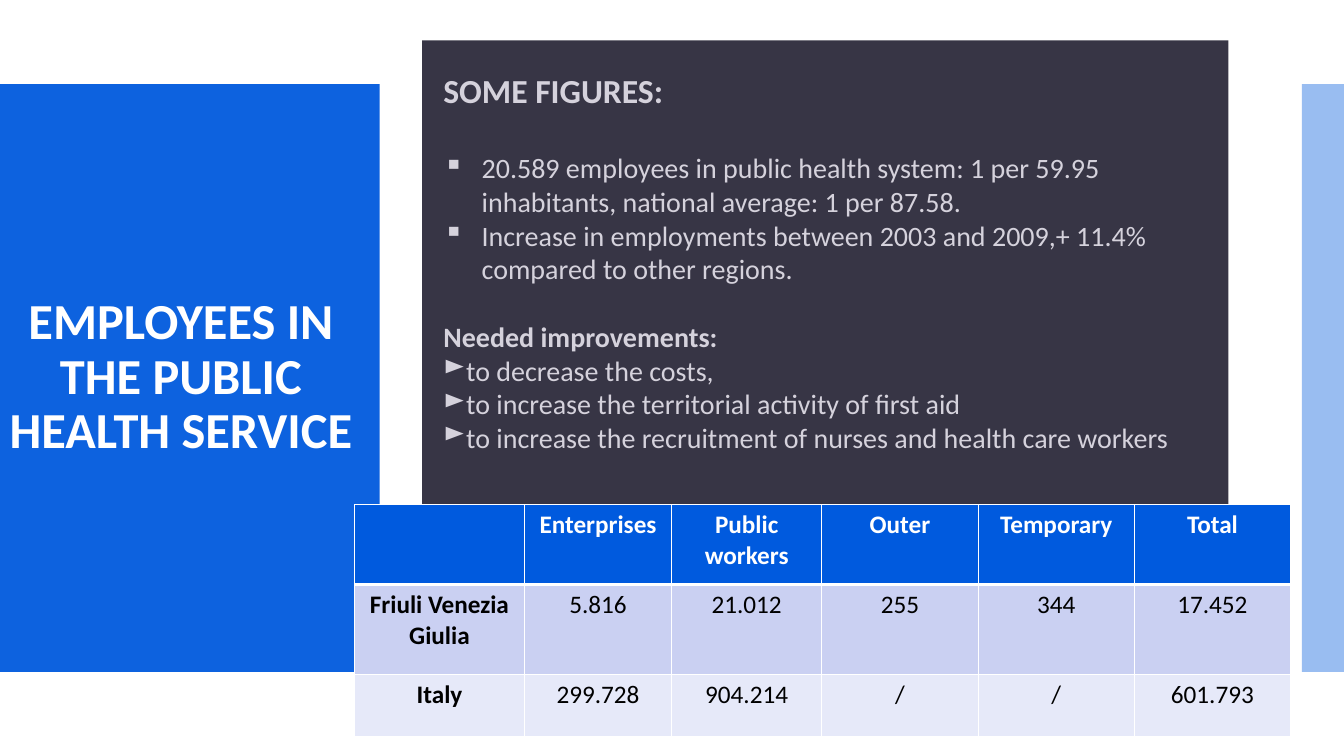
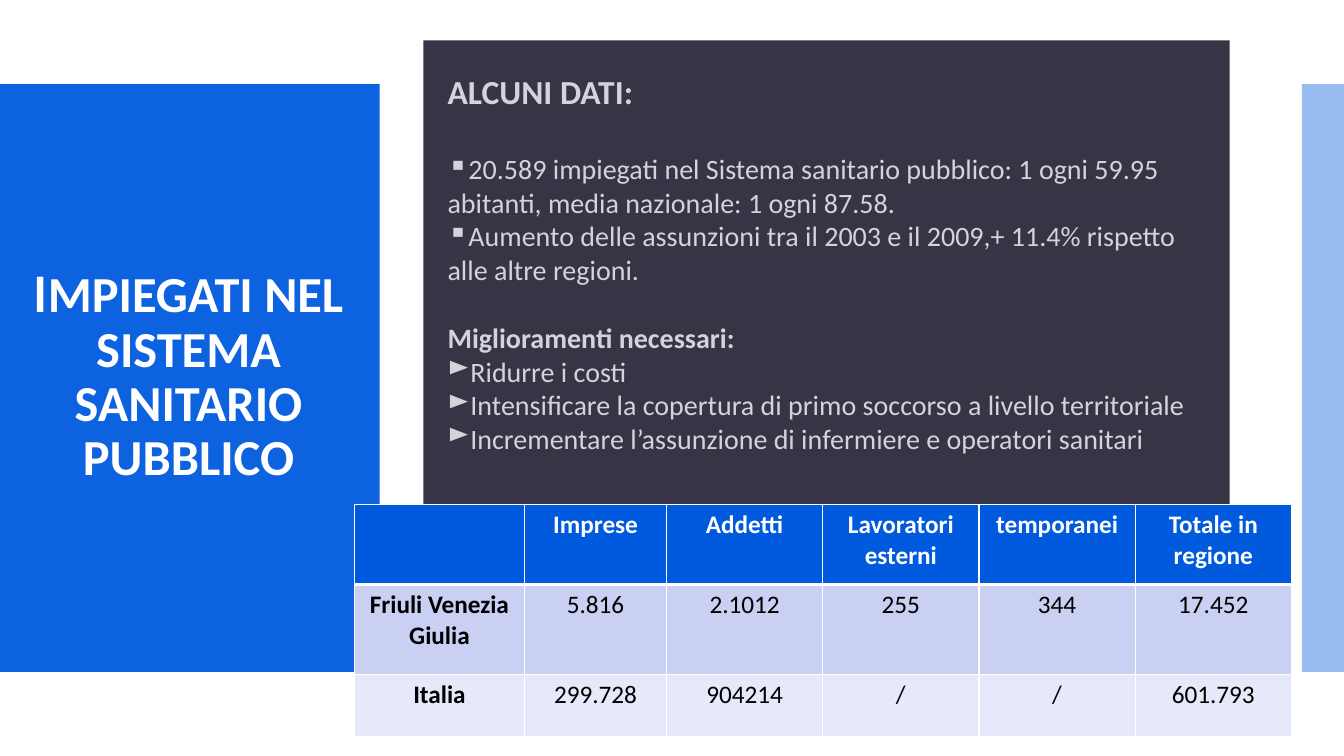
"""Build the English and Italian slides on public health service employees."""
from dataclasses import dataclass

from lxml.etree import SubElement
from pptx import Presentation
from pptx.dml.color import RGBColor
from pptx.enum.shapes import MSO_SHAPE
from pptx.enum.text import MSO_ANCHOR, MSO_AUTO_SIZE, PP_ALIGN
from pptx.oxml.ns import qn
from pptx.slide import Slide
from pptx.util import Emu, Inches, Pt

COLUMNS, ROWS = 160, 90
CELL = Inches(1 / 12)

BLUE = RGBColor(0x00, 0x5A, 0xDE)
DARK = RGBColor(0x37, 0x35, 0x45)
PALE = RGBColor(0xD5, 0xD2, 0xDC)
WHITE = RGBColor(0xFF, 0xFF, 0xFF)
BLACK = RGBColor(0x00, 0x00, 0x00)
BODY_FILLS = (RGBColor(0xCA, 0xD0, 0xF2), RGBColor(0xE6, 0xE9, 0xF9))

FONT, INITIAL_FONT = "Calibri", "Cabin"
LINE_HEIGHT = 1.22
TABLE_LEFT, TABLE_TOP = 42.2, 60.1
ROW_HEIGHTS = (9.5, 10.75, 7.4)


@dataclass(frozen=True)
class Box:
    """Area in grid columns and rows."""
    left: float
    top: float
    width: float
    height: float

    def emu(self) -> tuple[Emu, ...]:
        return tuple(grid(n) for n in (self.left, self.top, self.width, self.height))


@dataclass(frozen=True)
class Line:
    """Paragraph of the figures panel; indents are in inches, the gap in points."""
    text: str
    size: int = 20
    bold: bool = False
    bullet: str = ""
    margin: float = 0
    indent: float = 0
    gap: float = 0


@dataclass(frozen=True)
class Language:
    """Content and placement of one slide."""
    title: tuple[tuple[str, str], ...]
    title_left: float
    panel_left: float
    figures_left: float
    figures_top: float
    heading: str
    facts: tuple[str, ...]
    fact_margin: float
    fact_indent: float
    needs_heading: str
    needs: tuple[str, ...]
    column_widths: tuple[float, ...]
    staff: tuple[tuple[str, ...], ...]

    def lines(self) -> list[Line]:
        facts = [
            Line(fact, bullet="▪", margin=self.fact_margin, indent=self.fact_indent,
                 gap=0 if i else 24 * LINE_HEIGHT)
            for i, fact in enumerate(self.facts)
        ]
        needs = [Line(need, bullet="►", indent=-0.06) for need in self.needs]
        return [
            Line(self.heading, size=24, bold=True),
            *facts,
            Line(self.needs_heading, bold=True, gap=20 * LINE_HEIGHT),
            *needs,
        ]


ENGLISH = Language(
    title=(("EMPLOYEES IN THE PUBLIC HEALTH SERVICE", FONT),),
    title_left=-1.7, panel_left=50.25, figures_left=51.6, figures_top=7.7,
    heading="SOME FIGURES:",
    facts=(
        "20.589 employees in public health system: 1 per 59.95 inhabitants, "
        "national average: 1 per 87.58.",
        "Increase in employments between 2003 and 2009,+ 11.4% compared to other regions.",
    ),
    fact_margin=0.38, fact_indent=-0.38,
    needs_heading="Needed improvements:",
    needs=(
        "to decrease the costs,",
        "to increase the territorial activity of first aid",
        "to increase the recruitment of nurses and health care workers",
    ),
    column_widths=(20.25, 17.5, 17.9, 18.6, 18.6, 18.6),
    staff=(
        ("", "Enterprises", "Public workers", "Outer", "Temporary", "Total"),
        ("Friuli Venezia Giulia", "5.816", "21.012", "255", "344", "17.452"),
        ("Italy", "299.728", "904.214", "/", "/", "601.793"),
    ),
)
ITALIAN = Language(
    title=(("I", INITIAL_FONT), ("MPIEGATI NEL SISTEMA SANITARIO PUBBLICO", FONT)),
    title_left=-0.8, panel_left=50.4, figures_left=52.1, figures_top=7.8,
    heading="ALCUNI DATI:",
    facts=(
        "20.589 impiegati nel Sistema sanitario pubblico: 1 ogni 59.95 abitanti, "
        "media nazionale: 1 ogni 87.58.",
        "Aumento delle assunzioni tra il 2003 e il 2009,+ 11.4% rispetto alle altre regioni.",
    ),
    fact_margin=0, fact_indent=-0.14,
    needs_heading="Miglioramenti necessari:",
    needs=(
        "Ridurre i costi",
        "Intensificare la copertura di primo soccorso a livello territoriale",
        "Incrementare l’assunzione di infermiere e operatori sanitari",
    ),
    column_widths=(20.25, 16.9, 18.6, 18.6, 18.6, 18.6),
    staff=(
        ("", "Imprese", "Addetti", "Lavoratori esterni", "temporanei", "Totale in regione"),
        ("Friuli Venezia Giulia", "5.816", "2.1012", "255", "344", "17.452"),
        ("Italia", "299.728", "904214", "/", "/", "601.793"),
    ),
)


def grid(cells: float) -> Emu:
    return Emu(round(cells * CELL))


def style(font, size: int, color: RGBColor, bold: bool) -> None:
    font.name, font.size, font.bold = FONT, Pt(size), bold
    font.color.rgb = color


def draw_block(slide: Slide, box: Box, color: RGBColor, opacity: int = 100) -> None:
    block = slide.shapes.add_shape(MSO_SHAPE.RECTANGLE, *box.emu())
    block.shadow.inherit = False
    block.fill.solid()
    block.fill.fore_color.rgb = color
    block.line.fill.background()
    if opacity < 100:
        tint = block.element.spPr.find(f"{qn('a:solidFill')}/{qn('a:srgbClr')}")
        SubElement(tint, qn("a:alpha"), val=str(opacity * 1000))


def place_title(slide: Slide, language: Language) -> None:
    title = slide.shapes.title
    title.left, title.top, title.width, title.height = Box(
        language.title_left, 14.8, 46.5, 60.4).emu()
    title.element.getparent().append(title.element)
    frame = title.text_frame
    frame.word_wrap = True
    frame.auto_size = MSO_AUTO_SIZE.NONE
    frame.vertical_anchor = MSO_ANCHOR.MIDDLE
    paragraph = frame.paragraphs[0]
    paragraph.alignment = PP_ALIGN.CENTER
    paragraph.line_spacing = 0.9
    style(paragraph.font, 36, WHITE, True)
    for text, font_name in language.title:
        run = paragraph.add_run()
        run.text = text
        run.font.name = font_name


def add_bullet(paragraph, line: Line) -> None:
    properties = paragraph._p.get_or_add_pPr()
    properties.set("marL", str(Inches(line.margin)))
    properties.set("indent", str(Inches(line.indent)))
    SubElement(SubElement(properties, qn("a:buClr")), qn("a:srgbClr"), val=str(PALE))
    SubElement(properties, qn("a:buChar"), char=line.bullet)


def write_figures(slide: Slide, language: Language) -> None:
    area = Box(language.figures_left, language.figures_top, 94.2, 47.3)
    frame = slide.shapes.add_textbox(*area.emu()).text_frame
    frame.word_wrap = True
    for i, line in enumerate(language.lines()):
        paragraph = frame.add_paragraph() if i else frame.paragraphs[0]
        paragraph.text = line.text
        if line.bullet:
            add_bullet(paragraph, line)
        if line.gap:
            paragraph.space_before = Pt(line.gap)
        style(paragraph.font, line.size, PALE, line.bold)


def add_borders(cell, top: int, bottom: int) -> None:
    properties = cell._tc.get_or_add_tcPr()
    for side, width in (("L", 1), ("R", 1), ("T", top), ("B", bottom)):
        border = SubElement(properties, qn(f"a:ln{side}"), w=str(Pt(width)))
        SubElement(SubElement(border, qn("a:solidFill")), qn("a:srgbClr"), val=str(WHITE))


def draw_staff_table(slide: Slide, language: Language) -> None:
    widths = language.column_widths
    area = Box(TABLE_LEFT, TABLE_TOP, sum(widths), sum(ROW_HEIGHTS))
    table = slide.shapes.add_table(len(ROW_HEIGHTS), len(widths), *area.emu()).table
    table.first_row = table.horz_banding = False
    for column, width in zip(table.columns, widths):
        column.width = grid(width)
    for row, height in zip(table.rows, ROW_HEIGHTS):
        row.height = grid(height)
    fills = (BLUE, *BODY_FILLS)
    for r, texts in enumerate(language.staff):
        for c, text in enumerate(texts):
            cell = table.cell(r, c)
            add_borders(cell, top=3 if r == 1 else 1, bottom=3 if r == 0 else 1)
            cell.fill.solid()
            cell.fill.fore_color.rgb = fills[r]
            paragraph = cell.text_frame.paragraphs[0]
            if text:
                paragraph.text = text
            paragraph.alignment = PP_ALIGN.CENTER
            style(paragraph.font, 18, BLACK if r else WHITE, r == 0 or c == 0)


def build_slide(presentation, language: Language) -> None:
    slide = presentation.slides.add_slide(presentation.slide_layouts[5])
    draw_block(slide, Box(0, 10, 45.2, 70), BLUE, 95)
    draw_block(slide, Box(155, 10, 5, 70), BLUE, 40)
    place_title(slide, language)
    draw_block(slide, Box(language.panel_left, 4.8, 96, 70.4), DARK)
    draw_staff_table(slide, language)
    write_figures(slide, language)


def main() -> None:
    presentation = Presentation()
    presentation.slide_width, presentation.slide_height = grid(COLUMNS), grid(ROWS)
    for language in (ENGLISH, ITALIAN):
        build_slide(presentation, language)
    presentation.save("out.pptx")


if __name__ == "__main__":
    main()
